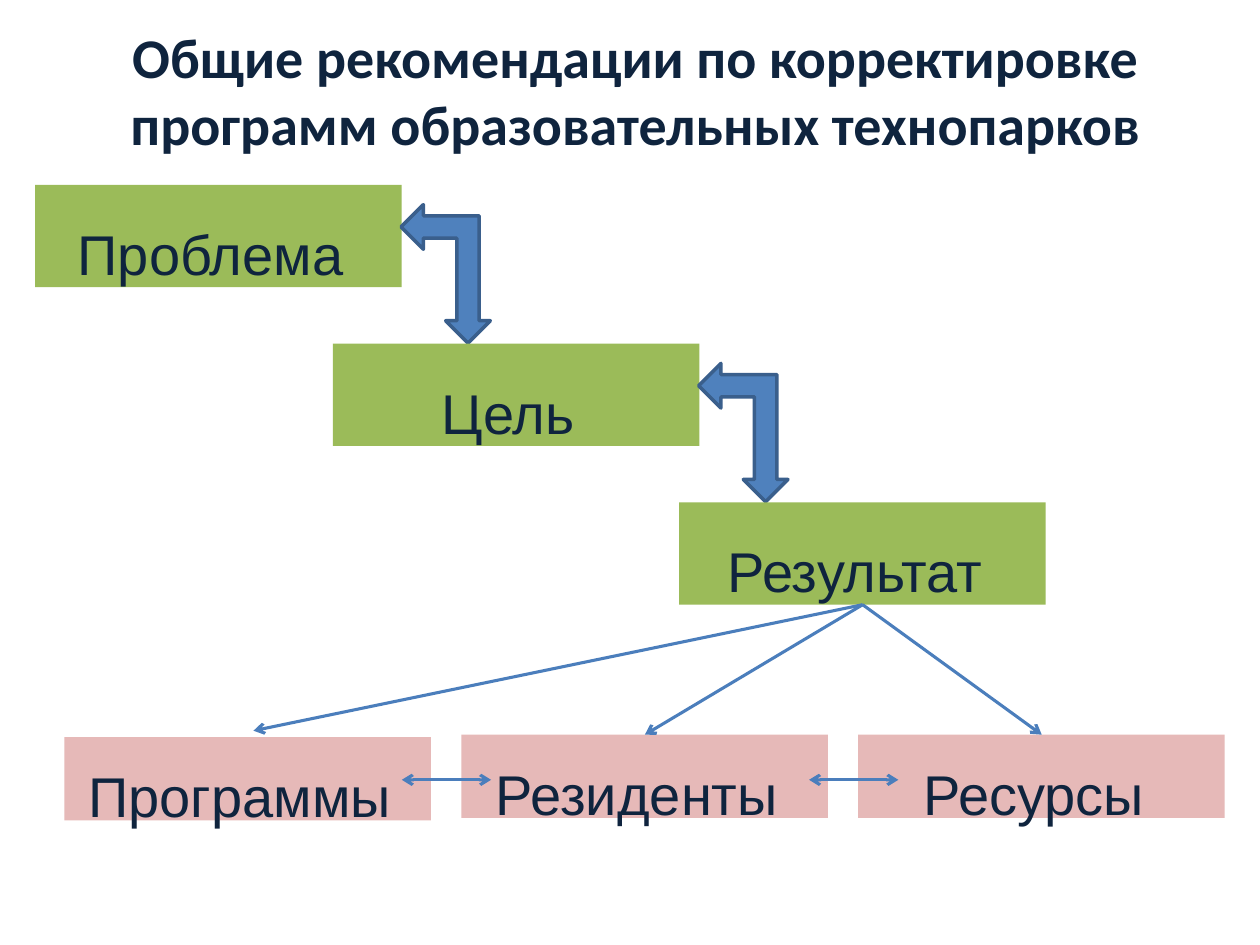
"""Build a slide that links problem, goal and result to three kinds of means."""
import dataclasses

import pptx
import pptx.dml.color
import pptx.enum.shapes
import pptx.enum.text
import pptx.oxml
import pptx.oxml.ns
import pptx.util
from lxml import etree

Cm = pptx.util.Cm
Pt = pptx.util.Pt
RGB = pptx.dml.color.RGBColor.from_string
Shape = pptx.enum.shapes.MSO_SHAPE
Anchor = pptx.enum.text.MSO_ANCHOR
qn = pptx.oxml.ns.qn


@dataclasses.dataclass(frozen=True)
class Theme:
    ink: str = "0F243E"
    green: str = "9BBB59"
    pink: str = "E6B9B8"
    blue: str = "4F81BD"
    edge: str = "3A5F8C"
    line: str = "4B7EBC"
    size: int = 32
    head: str = "Calibri"
    body: str = "Arial"


theme = Theme()


def write(shape, text, font=theme.body, bold=False, space=1.0, anchor=Anchor.MIDDLE):
    frame = shape.text_frame
    frame.word_wrap = True
    frame.auto_size = pptx.enum.text.MSO_AUTO_SIZE.NONE
    frame.vertical_anchor = anchor
    para = frame.paragraphs[0]
    para.alignment = pptx.enum.text.PP_ALIGN.CENTER
    para.line_spacing = space
    run = para.add_run()
    run.text = text
    run.font.name = font
    run.font.size = Pt(theme.size)
    run.font.bold = bold
    run.font.color.rgb = RGB(theme.ink)


def draw(kind, left, top, width, height, fill):
    shape = slide.shapes.add_shape(kind, Cm(left), Cm(top), Cm(width), Cm(height))
    shape.shadow.inherit = False
    shape.fill.solid()
    shape.fill.fore_color.rgb = RGB(fill)
    shape.line.fill.background()
    return shape


deck = pptx.Presentation()
deck.slide_width, deck.slide_height = Cm(25.4), Cm(19.05)
slide = deck.slides.add_slide(deck.slide_layouts[5])

title = slide.shapes.title
title.left, title.top, title.width, title.height = Cm(0.71), Cm(0.33), Cm(24.21), Cm(3)
write(title, "Общие рекомендации по корректировке программ образовательных технопарков",
      font=theme.head, bold=True, anchor=Anchor.TOP)

wide = 7.39
steps = [("Проблема ", 0.71), ("Цель ", 6.71), ("Результат ", 13.69)]
for i, (text, left) in enumerate(steps):
    top = 3.73 + 3.2 * i
    box = draw(Shape.RECTANGLE, left, top, wide, 2.06, theme.green)
    write(box, text, space=1.5)
    if i < len(steps) - 1:
        arrow = draw(Shape.LEFT_UP_ARROW, left + 6.88, top + 0.89, 2.79, 1.8, theme.blue)
        arrow.rotation = 270
        arrow.line.color.rgb = RGB(theme.edge)
        arrow.line.width = Pt(2)

means = [("Программы ", 14.86), ("Резиденты ", 14.81), ("Ресурсы ", 14.81)]
for i, (text, top) in enumerate(means):
    box = draw(Shape.RECTANGLE, 1.3 + 8 * i, top, wide, 1.68, theme.pink)
    write(box, text, space=1.5)

hub = (17.39, 12.19)
links = [(hub, (5.11, 14.73), ["tailEnd"])]
links += [(hub, (x, 14.81), ["tailEnd"]) for x in (13, 21)]
links += [((x, 15.72), (x + 1.8, 15.72), ["headEnd", "tailEnd"]) for x in (8.1, 16.31)]
for start, stop, tips in links:
    ends = [Cm(n) for n in start + stop]
    link = slide.shapes.add_connector(pptx.enum.shapes.MSO_CONNECTOR.STRAIGHT, *ends)
    link.line.color.rgb = RGB(theme.line)
    link.line.width = Pt(1.75)
    props = link._element.spPr
    for tip in tips:
        etree.SubElement(props.find(qn("a:ln")), qn("a:" + tip), type="arrow")
    etree.SubElement(props, qn("a:effectLst"))

deck.save("out.pptx")
